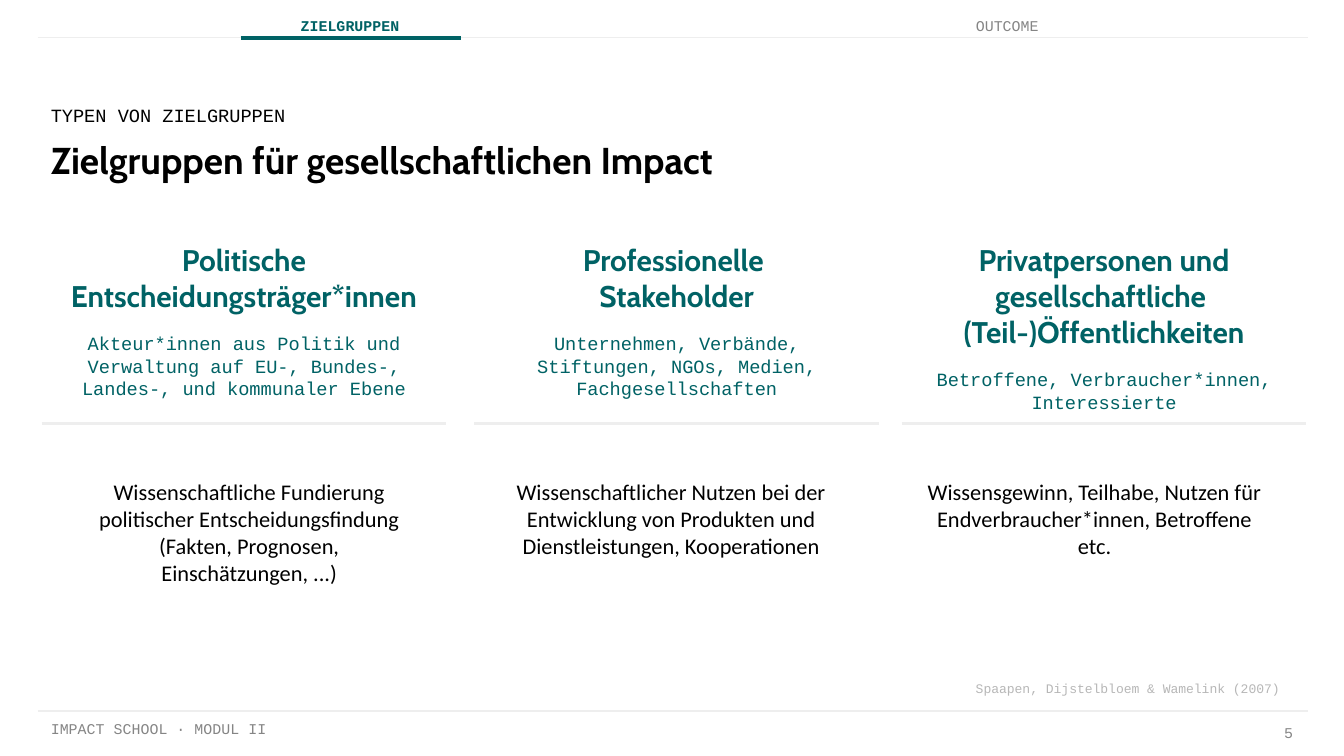
from dataclasses import dataclass

from lxml import etree
from pptx import Presentation
from pptx.dml.color import RGBColor
from pptx.enum.shapes import MSO_CONNECTOR as Connector
from pptx.enum.text import MSO_ANCHOR as Anchor, PP_ALIGN as Align
from pptx.oxml.ns import qn
from pptx.util import Inches, Pt


@dataclass(frozen=True)
class Theme:
    accent: str = "006265"
    ink: str = "000000"
    muted: str = "858585"
    pale: str = "B7B7B7"
    rule: str = "EEEEEE"
    display: str = "Cabin"
    mono: str = "Courier New"
    body: str = "Calibri"
    title_size: int = 20
    heading_size: int = 16
    body_size: int = 12
    label_size: int = 10
    small_size: int = 8
    source_size: int = 7


@dataclass(frozen=True)
class Box:
    left: float
    top: float
    width: float
    height: float

    def inner(self, left, top, width, height):
        return Box(self.left + left, self.top + top, width, height)


THEME = Theme()
PAGE_WIDTH = 10
PAGE_HEIGHT = PAGE_WIDTH * 9 / 16
MARGIN = 0.28
CONTENT_WIDTH = 9.45
COLUMN_WIDTH = 3.01

# Column left, benefit text offset, heading, examples, benefit
COLUMNS = [
    (0.31, 0.18, "Politische Entscheidungsträger*innen",
     "Akteur*innen aus Politik und Verwaltung auf EU-, Bundes-, Landes-, und kommunaler Ebene",
     "Wissenschaftliche Fundierung politischer Entscheidungsfindung (Fakten, Prognosen,\n"
     "Einschätzungen, ...)"),
    (3.53, 0.10, "Professionelle \nStakeholder",
     "Unternehmen, Verbände, Stiftungen, NGOs, Medien, Fachgesellschaften",
     "Wissenschaftlicher Nutzen bei der Entwicklung von Produkten und "
     "Dienstleistungen, Kooperationen"),
    (6.71, 0.07, "Privatpersonen und gesellschaftliche \n(Teil-)Öffentlichkeiten",
     "Betroffene, Verbraucher*innen, Interessierte",
     "Wissensgewinn, Teilhabe, Nutzen für Endverbraucher*innen, Betroffene etc."),
]


def add_frame(slide, box, anchor=Anchor.TOP, inset_x=0.1, inset_y=0.1):
    shape = slide.shapes.add_textbox(
        Inches(box.left), Inches(box.top), Inches(box.width), Inches(box.height))
    frame = shape.text_frame
    frame.word_wrap = True
    frame.vertical_anchor = anchor
    frame.margin_left = frame.margin_right = Inches(inset_x)
    frame.margin_top = frame.margin_bottom = Inches(inset_y)
    return frame


def write(paragraph, text, font, size, color, bold=False, align=Align.LEFT):
    paragraph.text = text
    paragraph.alignment = align
    paragraph.font.name = font
    paragraph.font.size = Pt(size)
    paragraph.font.bold = bold
    paragraph.font.color.rgb = RGBColor.from_string(color)


def add_rule(slide, left, top, width, color, weight):
    line = slide.shapes.add_connector(
        Connector.STRAIGHT, Inches(left), Inches(top), Inches(left + width), Inches(top))
    line.line.color.rgb = RGBColor.from_string(color)
    line.line.width = Pt(weight)
    etree.SubElement(line._element.spPr, qn("a:effectLst"))


def add_navigation(slide, box):
    rule_top = box.top + 0.26
    add_rule(slide, box.left, rule_top, box.width, THEME.rule, 0.75)
    add_rule(slide, box.left + 1.51, rule_top, 1.64, THEME.accent, 2.25)
    tabs = [("ZIELGRUPPEN", 1.75, 1.15, 0, THEME.accent, True),
            ("OUTCOME", 6.34, 1.75, 0.1, THEME.muted, False)]
    for text, left, width, inset, color, bold in tabs:
        frame = add_frame(slide, box.inner(left, 0, width, box.height), Anchor.MIDDLE, inset)
        write(frame.paragraphs[0], text, THEME.mono, THEME.small_size, color, bold, Align.CENTER)


def add_header(slide, box):
    kicker = add_frame(slide, box.inner(0, 0, box.width, 0.2), Anchor.MIDDLE)
    write(kicker.paragraphs[0], "TYPEN VON ZIELGRUPPEN", THEME.mono, THEME.label_size, THEME.ink)
    title = add_frame(slide, box.inner(0, 0.16, box.width, 0.52))
    write(title.paragraphs[0], "Zielgruppen für gesellschaftlichen Impact",
          THEME.display, THEME.title_size, THEME.ink, True)


def add_column(slide, box, benefit_offset, heading, examples, benefit):
    # Target group and examples
    group = add_frame(slide, box.inner(0, 0, box.width, 1.1))
    write(group.paragraphs[0], heading, THEME.display, THEME.heading_size,
          THEME.accent, True, Align.CENTER)
    paragraph = group.add_paragraph()
    write(paragraph, examples, THEME.mono, THEME.label_size, THEME.accent, align=Align.CENTER)
    paragraph.space_before = Pt(10)

    # Divider and benefit
    add_rule(slide, box.left, box.top + 1.45, box.width, THEME.rule, 1.5)
    frame = add_frame(slide, box.inner(benefit_offset, 1.76, 2.73, box.height - 1.76))
    write(frame.paragraphs[0], benefit, THEME.body, THEME.body_size, THEME.ink,
          align=Align.CENTER)


def add_footer(slide, box):
    add_rule(slide, box.left, box.top, box.width, THEME.rule, 0.75)
    name = add_frame(slide, box.inner(0, 0, 6.3, box.height), inset_y=0.12)
    write(name.paragraphs[0], "IMPACT SCHOOL · MODUL II", THEME.mono,
          THEME.small_size, THEME.muted)
    number = add_frame(slide, box.inner(box.width - 0.44, 0, 0.43, box.height), Anchor.MIDDLE)
    write(number.paragraphs[0], "5", THEME.mono, THEME.small_size, THEME.muted,
          align=Align.RIGHT)
    number.paragraphs[0].line_spacing = 0.8


def add_source(slide, box):
    frame = add_frame(slide, box, inset_x=0.07, inset_y=0.04)
    write(frame.paragraphs[0], "Spaapen, Dijstelbloem & Wamelink (2007)",
          THEME.mono, THEME.source_size, THEME.pale)


def main():
    presentation = Presentation()
    presentation.slide_width = Inches(PAGE_WIDTH)
    presentation.slide_height = Inches(PAGE_HEIGHT)
    slide = presentation.slides.add_slide(presentation.slide_layouts[6])

    add_navigation(slide, Box(MARGIN, 0.02, CONTENT_WIDTH, 0.34))
    add_header(slide, Box(MARGIN, 0.76, 7.77, 0.68))
    for left, *content in COLUMNS:
        add_column(slide, Box(left, 1.7, COLUMN_WIDTH, 2.77), *content)
    add_source(slide, Box(7.19, 5.02, 2.54, 0.19))
    add_footer(slide, Box(MARGIN, 5.29, CONTENT_WIDTH, 0.34))

    presentation.save("out.pptx")


if __name__ == "__main__":
    main()
